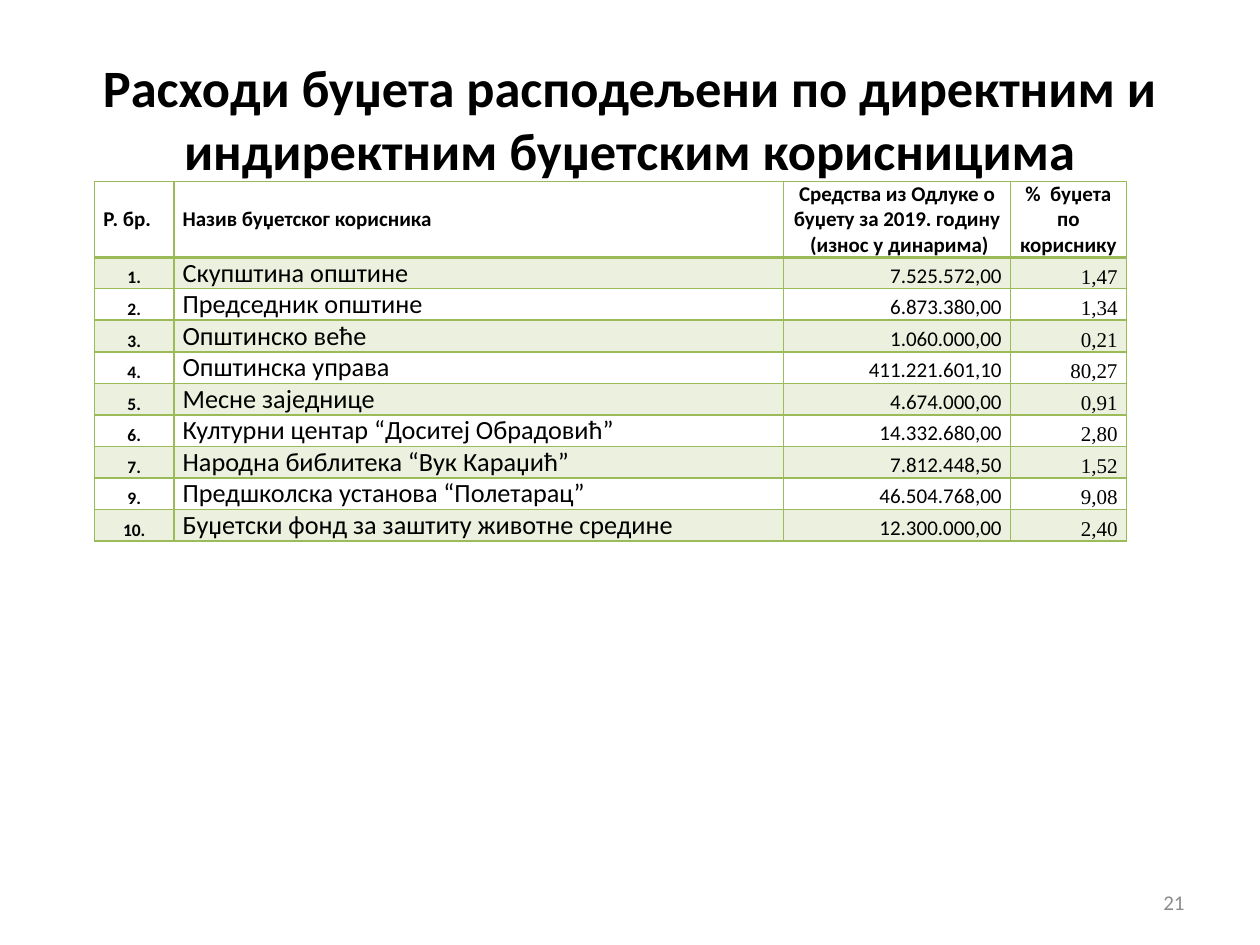
from dataclasses import dataclass

from lxml import etree
from pptx import Presentation
from pptx.dml.color import RGBColor
from pptx.enum.text import MSO_ANCHOR, PP_ALIGN
from pptx.oxml.ns import qn
from pptx.util import Inches, Pt

LEFT, CENTER, RIGHT = PP_ALIGN.LEFT, PP_ALIGN.CENTER, PP_ALIGN.RIGHT
MIDDLE, BOTTOM = MSO_ANCHOR.MIDDLE, MSO_ANCHOR.BOTTOM
PAGE_WIDTH, PAGE_HEIGHT = Inches(10), Inches(7.5)
BLANK_LAYOUT = 6


@dataclass(frozen=True)
class Theme:
    sans: str = "Calibri"
    serif: str = "Times New Roman"
    ink: str = "000000"
    muted: str = "8C8C8C"
    line: str = "9BBB59"
    band: str = "EBF1DE"
    title: float = 30
    name: float = 15
    normal: float = 12
    small: float = 10
    thin: float = 1
    thick: float = 2


THEME = Theme()


@dataclass(frozen=True)
class Column:
    heading: str
    width: float
    heading_align: PP_ALIGN
    align: PP_ALIGN
    size: float
    font: str = THEME.sans
    bold: bool = False


COLUMNS = [
    Column("Р. бр.", 0.63, LEFT, CENTER, THEME.small, bold=True),
    Column("Назив буџетског корисника", 4.84, LEFT, LEFT, THEME.name),
    Column("Средства из Одлуке о буџету за 2019. годину  (износ у динарима)",
           1.8, CENTER, RIGHT, THEME.normal),
    Column("%  буџета по кориснику", 0.92, CENTER, RIGHT, THEME.normal, THEME.serif),
]
USERS = [
    ("1.", "Скупштина општине", "7.525.572,00", "1,47"),
    ("2.", "Председник општине", "6.873.380,00", "1,34"),
    ("3.", "Општинско веће", "1.060.000,00", "0,21"),
    ("4.", "Општинска управа", "411.221.601,10", "80,27"),
    ("5.", "Месне заједнице", "4.674.000,00", "0,91"),
    ("6.", "Културни центар “Доситеј Обрадовић”", "14.332.680,00", "2,80"),
    ("7.", "Народна библитека “Вук Караџић”", "7.812.448,50", "1,52"),
    ("9.", "Предшколска установа “Полетарац”", "46.504.768,00", "9,08"),
    ("10.", "Буџетски фонд за заштиту животне средине", "12.300.000,00", "2,40"),
]
HEADING_HEIGHT, ROW_HEIGHT = 0.6, 0.25


def write_text(frame, text: str, *, size: float, align: PP_ALIGN = LEFT,
               font: str = THEME.sans, color: str = THEME.ink, bold: bool = False) -> None:
    frame.word_wrap = True
    para = frame.paragraphs[0]
    para.alignment = align
    span = para.add_run()
    span.text = text
    span.font.name = font
    span.font.size = Pt(size)
    span.font.bold = bold
    span.font.color.rgb = RGBColor.from_string(color)


def add_label(page, text: str, left: float, top: float, width: float, height: float,
              **text_format) -> None:
    """Add a text box placed in shares of the page size."""
    box = page.shapes.add_textbox(int(PAGE_WIDTH * left), int(PAGE_HEIGHT * top),
                                  int(PAGE_WIDTH * width), int(PAGE_HEIGHT * height))
    box.text_frame.vertical_anchor = MIDDLE
    write_text(box.text_frame, text, **text_format)


def set_borders(cell, top: float, bottom: float) -> None:
    properties = cell._tc.get_or_add_tcPr()
    widths = {"a:lnL": THEME.thin, "a:lnR": THEME.thin, "a:lnT": top, "a:lnB": bottom}
    for tag, width in widths.items():
        line = etree.SubElement(properties, qn(tag), w=str(Pt(width)))
        fill = etree.SubElement(line, qn("a:solidFill"))
        etree.SubElement(fill, qn("a:srgbClr"), val=THEME.line)


def fill_cell(cell, column: Column, text: str, row: int) -> None:
    cell.margin_left = cell.margin_right = Inches(0.07)
    cell.margin_top = cell.margin_bottom = 0
    set_borders(cell, top=THEME.thick if row == 1 else THEME.thin,
                bottom=THEME.thick if row == 0 else THEME.thin)
    if row % 2:
        cell.fill.solid()
        cell.fill.fore_color.rgb = RGBColor.from_string(THEME.band)
    else:
        cell.fill.background()
    if row == 0:
        cell.vertical_anchor = MIDDLE
        write_text(cell.text_frame, text, size=THEME.normal,
                   align=column.heading_align, bold=True)
    else:
        cell.vertical_anchor = BOTTOM
        write_text(cell.text_frame, text, size=column.size, align=column.align,
                   font=column.font, bold=column.bold)


def add_budget_table(page) -> None:
    rows = [tuple(column.heading for column in COLUMNS), *USERS]
    width = sum(column.width for column in COLUMNS)
    height = HEADING_HEIGHT + ROW_HEIGHT * len(USERS)
    table = page.shapes.add_table(len(rows), len(COLUMNS), Inches(0.75), Inches(1.44),
                                  Inches(width), Inches(height)).table
    table.first_row = table.horz_banding = False
    for index, column in enumerate(COLUMNS):
        table.columns[index].width = Inches(column.width)
    for row, values in enumerate(rows):
        table.rows[row].height = Inches(ROW_HEIGHT if row else HEADING_HEIGHT)
        for index, (column, text) in enumerate(zip(COLUMNS, values)):
            fill_cell(table.cell(row, index), column, text, row)


def main() -> None:
    deck = Presentation()
    deck.slide_width, deck.slide_height = PAGE_WIDTH, PAGE_HEIGHT
    page = deck.slides.add_slide(deck.slide_layouts[BLANK_LAYOUT])
    add_label(page, "Расходи буџета расподељени по директним и индиректним буџетским корисницима",
              0.05, 0.04, 0.9, 0.17, size=THEME.title, align=CENTER, bold=True)
    add_budget_table(page)
    add_label(page, "21", 0.72, 0.93, 0.23, 0.05,
              size=THEME.normal, align=RIGHT, color=THEME.muted)
    deck.save("out.pptx")


if __name__ == "__main__":
    main()
